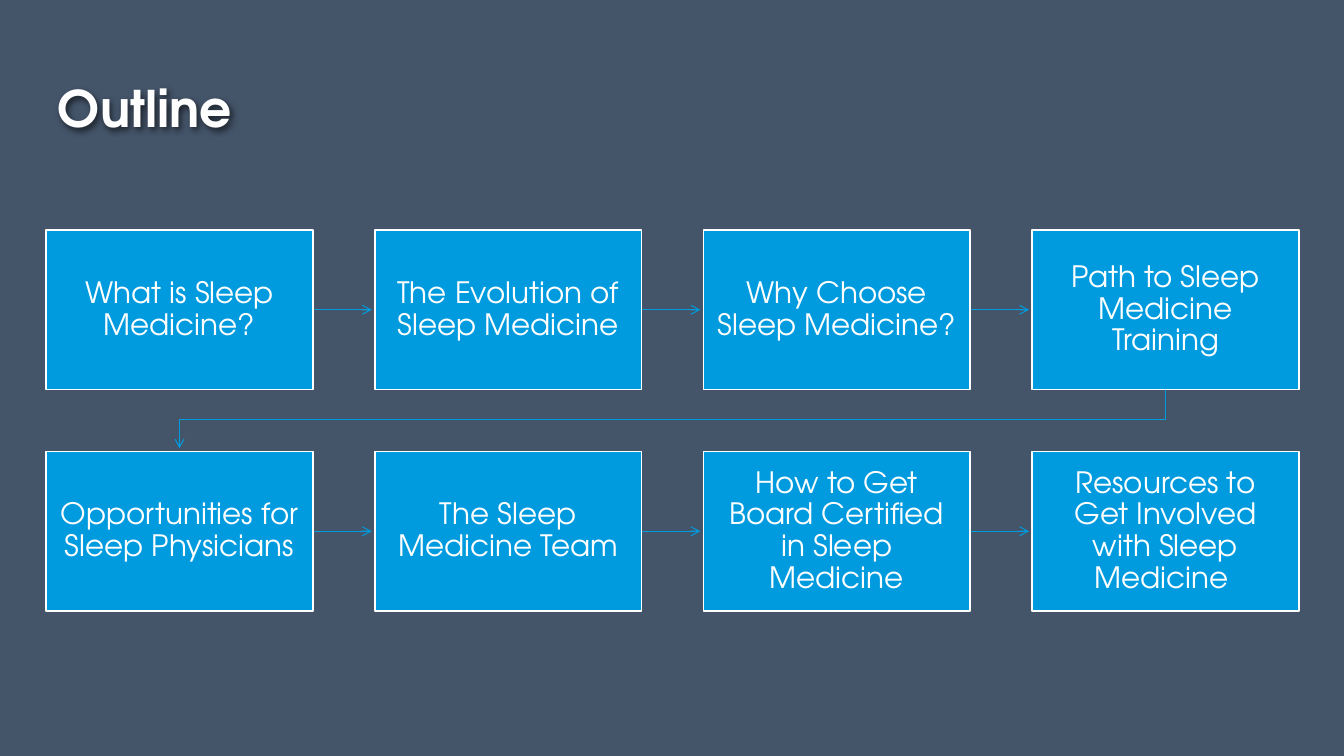
from typing import NamedTuple

from lxml.etree import SubElement
from pptx import Presentation
from pptx.dml.color import RGBColor
from pptx.enum.shapes import MSO_CONNECTOR as Connector, MSO_SHAPE as Shape
from pptx.enum.text import MSO_ANCHOR as Anchor, PP_ALIGN as Align
from pptx.oxml.ns import qn
from pptx.util import Emu, Pt

FONT = "TeX Gyre Adventor"
SLATE, BLUE, WHITE, TITLE_WHITE = "445469", "009BDE", "FFFFFF", "FEFEFE"
COLUMNS = 4
LEFT, TOP = 44, 219
WIDTH, HEIGHT = 254, 152
COLUMN_STEP, ROW_STEP = 313, 211
ARROW_GAP = 3
TOPICS = [
    "What is Sleep Medicine?",
    "The Evolution of Sleep Medicine",
    "Why Choose Sleep Medicine?",
    "Path to Sleep Medicine Training",
    "Opportunities for Sleep Physicians",
    "The Sleep Medicine Team",
    "How to Get Board Certified in Sleep Medicine",
    "Resources to Get Involved with Sleep Medicine ",
]


class Step(NamedTuple):
    text: str
    left: int
    top: int

    @property
    def center(self) -> int:
        return self.left + WIDTH // 2

    @property
    def middle(self) -> int:
        return self.top + HEIGHT // 2

    @property
    def right(self) -> int:
        return self.left + WIDTH

    @property
    def bottom(self) -> int:
        return self.top + HEIGHT


def px(value: int) -> Emu:
    return Emu(value * 9525)


def color(value: str) -> RGBColor:
    return RGBColor.from_string(value)


def set_text(shape, text: str, size: int, font_color: str, side: int, edge: int):
    frame = shape.text_frame
    frame.word_wrap = True
    frame.vertical_anchor = Anchor.MIDDLE
    frame.margin_left = frame.margin_right = px(side)
    frame.margin_top = frame.margin_bottom = px(edge)
    paragraph = frame.paragraphs[0]
    paragraph.text = text
    paragraph.font.name = FONT
    paragraph.font.size = Pt(size)
    paragraph.font.color.rgb = color(font_color)
    return paragraph


def add_title(slide, text: str) -> None:
    shape = slide.shapes.add_textbox(px(43), px(62), px(1192), px(81))
    paragraph = set_text(shape, text, 36, TITLE_WHITE, 12, 12)
    paragraph.font.bold = True
    effects = SubElement(shape._element.spPr, qn("a:effectLst"))
    shadow = SubElement(effects, qn("a:outerShdw"), blurRad="50800", dist="25400", dir="2700000")
    shade = SubElement(shadow, qn("a:srgbClr"), val="000000")
    SubElement(shade, qn("a:alpha"), val="60000")


def add_step(slide, step: Step) -> None:
    shape = slide.shapes.add_shape(Shape.RECTANGLE, px(step.left), px(step.top), px(WIDTH), px(HEIGHT))
    shape.shadow.inherit = False
    shape.fill.solid()
    shape.fill.fore_color.rgb = color(BLUE)
    shape.line.color.rgb = color(WHITE)
    shape.line.width = Pt(1.25)
    paragraph = set_text(shape, step.text, 21, WHITE, 12, 13)
    paragraph.alignment = Align.CENTER
    paragraph.line_spacing = 0.9


def style_arrow(shape) -> None:
    shape.line.color.rgb = color(BLUE)
    shape.line.width = Pt(0.75)
    SubElement(shape.line._get_or_add_ln(), qn("a:tailEnd"), type="arrow")
    SubElement(shape._element.spPr, qn("a:effectLst"))


def add_row_arrow(slide, start: Step, end: Step) -> None:
    connector = slide.shapes.add_connector(
        Connector.STRAIGHT, px(start.right), px(start.middle), px(end.left - ARROW_GAP), px(end.middle)
    )
    style_arrow(connector)


def add_wrap_arrow(slide, start: Step, end: Step) -> None:
    turn = (start.bottom + end.top) // 2
    builder = slide.shapes.build_freeform(start.center, start.bottom, scale=px(1))
    builder.add_line_segments(
        [(start.center, turn), (end.center, turn), (end.center, end.top - ARROW_GAP)], close=False
    )
    shape = builder.convert_to_shape()
    shape.fill.background()
    style_arrow(shape)


def main() -> None:
    presentation = Presentation()
    presentation.slide_width, presentation.slide_height = px(1280), px(720)
    slide = presentation.slides.add_slide(presentation.slide_layouts[6])
    slide.background.fill.solid()
    slide.background.fill.fore_color.rgb = color(SLATE)
    add_title(slide, "Outline")

    steps = [
        Step(text, LEFT + index % COLUMNS * COLUMN_STEP, TOP + index // COLUMNS * ROW_STEP)
        for index, text in enumerate(TOPICS)
    ]
    for start, end in zip(steps, steps[1:]):
        add_arrow = add_row_arrow if start.top == end.top else add_wrap_arrow
        add_arrow(slide, start, end)
    for step in steps:
        add_step(slide, step)
    presentation.save("out.pptx")


if __name__ == "__main__":
    main()
